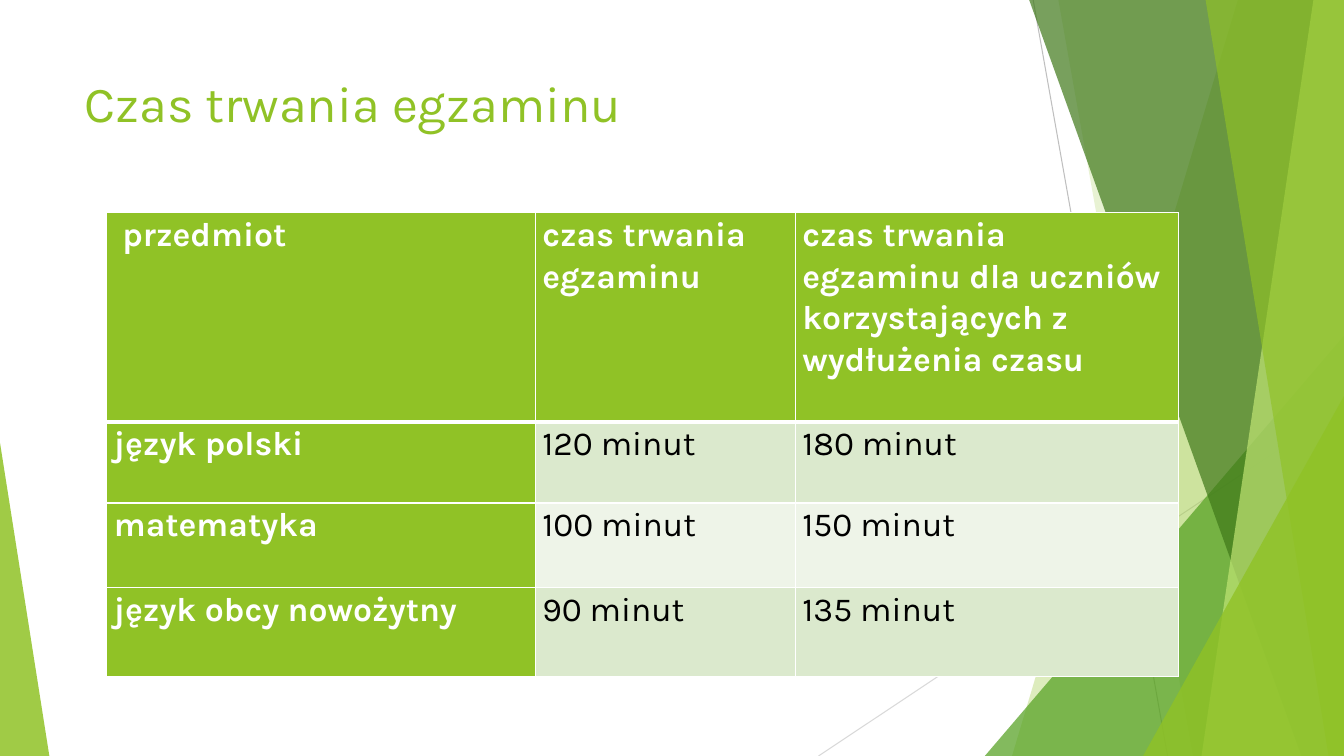
from lxml import etree
from pptx import Presentation
from pptx.dml.color import RGBColor
from pptx.enum.shapes import MSO_CONNECTOR, MSO_SHAPE
from pptx.enum.text import MSO_ANCHOR, MSO_AUTO_SIZE, PP_ALIGN
from pptx.oxml.ns import qn
from pptx.util import Inches, Pt

STRAIGHT = MSO_CONNECTOR.STRAIGHT
TRIANGLE = MSO_SHAPE.ISOSCELES_TRIANGLE
TOP, LEFT, NO_FIT = MSO_ANCHOR.TOP, PP_ALIGN.LEFT, MSO_AUTO_SIZE.NONE

# Page grid: 40 columns by 30 rows
PAGE_WIDTH, PAGE_HEIGHT = Inches(13.33), Inches(7.5)
COLUMNS, ROWS = 40, 30
FONT = "Karla"
COLORS = {
    "green": "90C226", "leaf": "54A021", "forest": "3F7819", "lime": "C0E474",
    "band_dark": "DBE9CD", "band_light": "EEF4E8",
    "white": "FFFFFF", "black": "000000", "gray": "BFBFBF", "pale_gray": "D9D9D9",
}

# start column, start row, end column, end row, colour
RAYS = [(30.75, 0, 34.75, 30, "gray"), (40, 16.12, 24.36, 30, "pale_gray")]
# top column, bottom column, colour, opacity; each band reaches the right edge
BACK_BANDS = [(36.84, 30.12, "green", 30), (31.5, 35.5, "green", 20)]
FRONT_BANDS = [(30.63, 38.73, "forest", 70), (39.09, 35.76, "lime", 70),
               (35.88, 39.54, "green", 65)]
# left column, right column, top row, apex position, colour, opacity
BACK_PEAK = (29.31, 40, 13.32, 1, "leaf", 72)
FRONT_PEAKS = [(34.02, 40, 15.72, 1, "green", 80), (0, 1.47, 17.56, 0, "green", 85)]

TABLE_COLUMNS = [12.75, 7.74, 11.4]
TABLE_ROWS = [8.32, 3.2, 3.36, 3.52]
EXAM_TIMES = [
    [" przedmiot", "czas trwania egzaminu",
     "czas trwania egzaminu dla uczniów korzystających z wydłużenia czasu"],
    ["język polski", "120 minut", "180 minut"],
    ["matematyka", "100 minut", "150 minut"],
    ["język obcy nowożytny", "90 minut", "135 minut"],
]


def across(columns):
    return round(PAGE_WIDTH * columns / COLUMNS)


def down(rows):
    return round(PAGE_HEIGHT * rows / ROWS)


def rgb(name):
    return RGBColor.from_string(COLORS[name])


def apply_format(target, values):
    for name, value in values.items():
        setattr(target, name, value)


def format_text(frame, size, color, bold, spacing):
    for para in frame.paragraphs:
        apply_format(para, {"alignment": LEFT, "line_spacing": spacing})
        for span in para.runs:
            apply_format(span.font, {"name": FONT, "size": Pt(size), "bold": bold})
            span.font.color.rgb = rgb(color)


def paint(shape, color, opacity):
    shape.shadow.inherit = False
    shape.fill.solid()
    shape.fill.fore_color.rgb = rgb(color)
    shape.line.fill.background()
    tint = shape.fill._xPr.find(qn("a:solidFill"))[0]
    etree.SubElement(tint, qn("a:alpha"), val=str(opacity * 1000))


def add_ray(page, start_x, start_y, end_x, end_y, color):
    ray = page.shapes.add_connector(STRAIGHT, across(start_x), down(start_y),
                                    across(end_x), down(end_y))
    ray.line.color.rgb = rgb(color)
    ray.line.width = Pt(0.75)
    etree.SubElement(ray._element.spPr, qn("a:effectLst"))


def add_band(page, top_x, bottom_x, color, opacity):
    outline = page.shapes.build_freeform(across(top_x), 0)
    outline.add_line_segments([(PAGE_WIDTH, 0), (PAGE_WIDTH, PAGE_HEIGHT),
                               (across(bottom_x), PAGE_HEIGHT)], close=True)
    paint(outline.convert_to_shape(), color, opacity)


def add_peak(page, left, right, top, apex, color, opacity):
    peak = page.shapes.add_shape(TRIANGLE, across(left), down(top),
                                 across(right - left), down(ROWS - top))
    peak.adjustments[0] = apex
    paint(peak, color, opacity)


def add_backdrop(page):
    for ray in RAYS:
        add_ray(page, *ray)
    for band in BACK_BANDS:
        add_band(page, *band)
    add_peak(page, *BACK_PEAK)
    for band in FRONT_BANDS:
        add_band(page, *band)
    for peak in FRONT_PEAKS:
        add_peak(page, *peak)


def set_title(page, text):
    title = page.shapes.title
    apply_format(title, {"left": across(2.22), "top": down(2.68),
                         "width": across(28.2), "height": down(5.76)})
    frame = title.text_frame
    frame.text = text
    apply_format(frame, {"vertical_anchor": TOP, "word_wrap": True, "auto_size": NO_FIT})
    format_text(frame, 36, "green", False, 1.0)


def set_borders(cell, widths):
    # Border lines come before the fill in the cell properties
    properties = cell._tc.get_or_add_tcPr()
    for index, (side, width) in enumerate(widths.items()):
        line = etree.Element(qn("a:ln" + side), w=str(Pt(width)))
        fill = etree.SubElement(line, qn("a:solidFill"))
        etree.SubElement(fill, qn("a:srgbClr"), val=COLORS["white"])
        properties.insert(index, line)


def fill_cell(cell, text, row, column):
    heading = row == 0 or column == 0
    band = "band_dark" if row % 2 else "band_light"
    cell.text = text
    apply_format(cell, {"margin_left": Inches(0.07), "margin_right": Inches(0.07),
                        "margin_top": 0, "margin_bottom": 0, "vertical_anchor": TOP})
    format_text(cell.text_frame, 24, "white" if heading else "black", heading, 1.07)
    cell.fill.solid()
    cell.fill.fore_color.rgb = rgb("green" if heading else band)
    set_borders(cell, {"L": 1, "R": 1, "T": 3 if row == 1 else 1, "B": 3 if row == 0 else 1})


def add_exam_table(page):
    table = page.shapes.add_table(
        len(TABLE_ROWS), len(TABLE_COLUMNS), across(3.18), down(8.44),
        across(sum(TABLE_COLUMNS)), down(sum(TABLE_ROWS))).table
    for column, width in zip(table.columns, TABLE_COLUMNS):
        column.width = across(width)
    for row, height in zip(table.rows, TABLE_ROWS):
        row.height = down(height)
    for row, texts in enumerate(EXAM_TIMES):
        for column, text in enumerate(texts):
            fill_cell(table.cell(row, column), text, row, column)


def main():
    deck = Presentation()
    deck.slide_width, deck.slide_height = PAGE_WIDTH, PAGE_HEIGHT
    page = deck.slides.add_slide(deck.slide_layouts.get_by_name("Title Only"))
    add_backdrop(page)
    set_title(page, "Czas trwania egzaminu")
    add_exam_table(page)
    deck.save("out.pptx")


if __name__ == "__main__":
    main()
